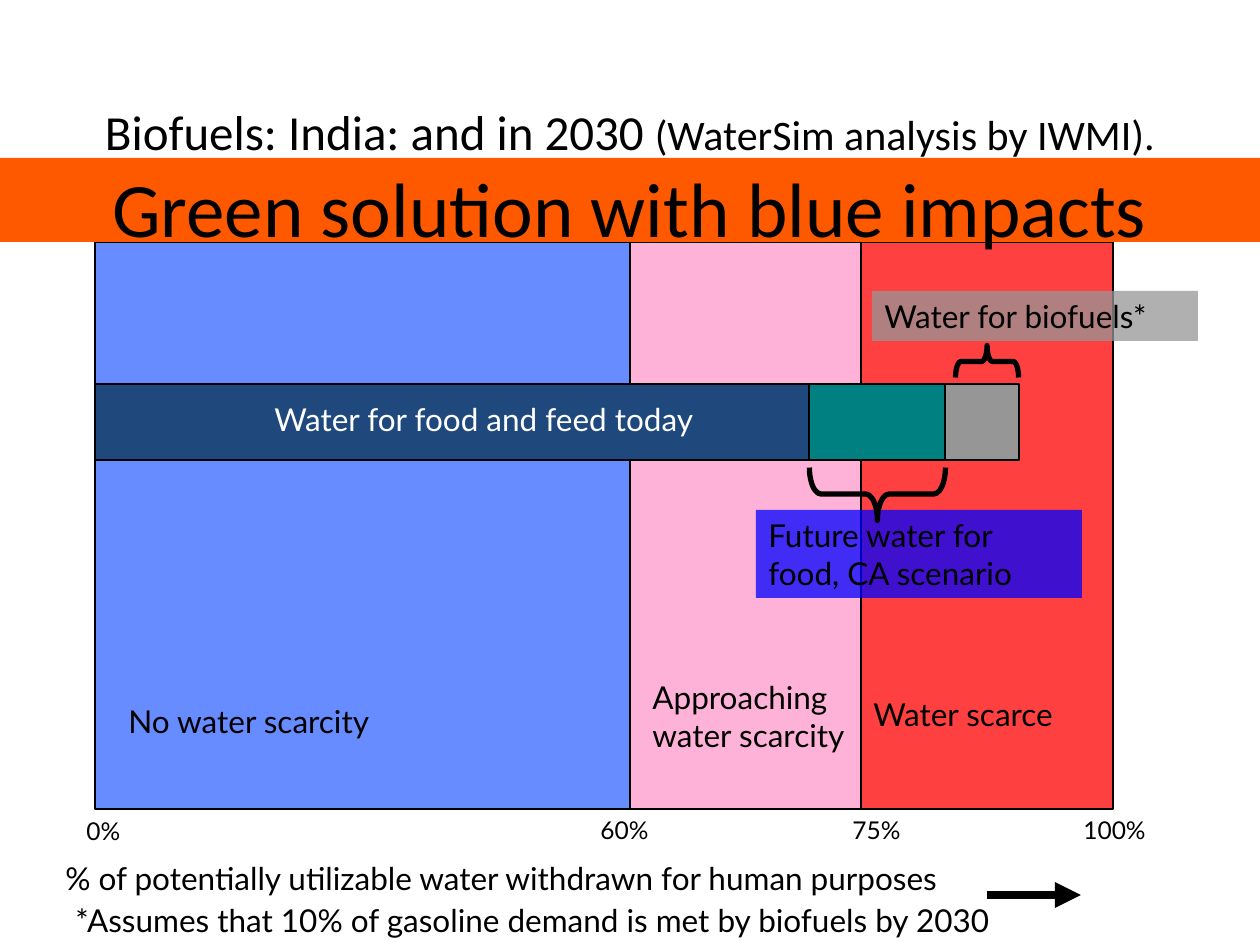
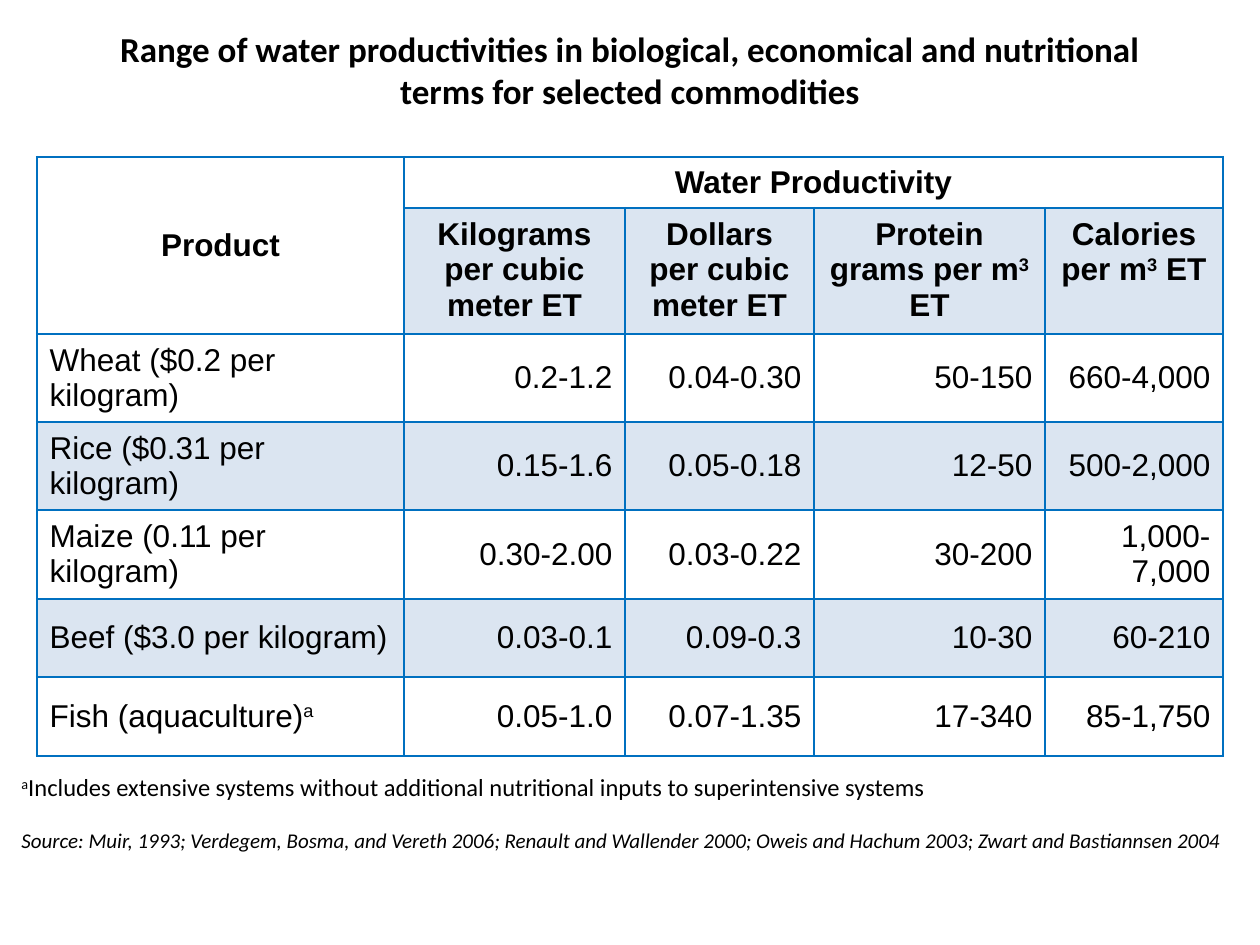
from dataclasses import dataclass
from itertools import product

import pptx
import pptx.dml.color
import pptx.enum.dml
import pptx.enum.shapes
import pptx.enum.text
import pptx.oxml
import pptx.oxml.ns
import pptx.util

EMU_PER_PX = 914400 / 126
ALIGN = pptx.enum.text.PP_ALIGN
ANCHOR = pptx.enum.text.MSO_ANCHOR
SHAPE = pptx.enum.shapes.MSO_SHAPE
COLORS = {
    "ink": "000000",
    "white": "FFFFFF",
    "strip": "FF5900",
    "plenty": "3366FF",
    "approaching": "FF99CC",
    "scarce": "FF0000",
    "food_today": "1F497D",
    "food_future": "008080",
    "food_callout": "0000FF",
    "biofuels": "969696",
    "grid": "0070C0",
    "shade": "4F81BD",
}


@dataclass(frozen=True)
class Box:
    left: int
    top: int
    width: int
    height: int

    def emu(self) -> list[int]:
        return [px(n) for n in (self.left, self.top, self.width, self.height)]


@dataclass(frozen=True)
class Segment:
    width: int
    color: str


@dataclass(frozen=True)
class Label:
    text: str
    box: Box
    size: int = 18
    color: str = "ink"


@dataclass(frozen=True)
class Callout:
    text: str
    box: Box
    color: str


@dataclass(frozen=True)
class Brace:
    box: Box
    rotation: int
    curl: float


ZONES = [Segment(535, "plenty"), Segment(231, "approaching"), Segment(252, "scarce")]
USES = [Segment(714, "food_today"), Segment(136, "food_future"), Segment(74, "biofuels")]
LABELS = [
    Label("% of potentially utilizable water withdrawn for human purposes", Box(53, 853, 998, 50)),
    Label("*Assumes that 10% of gasoline demand is met by biofuels by 2030", Box(63, 895, 1092, 50)),
    Label("No water scarcity", Box(116, 696, 315, 50)),
    Label("Approaching water scarcity", Box(640, 672, 221, 126)),
    Label("Water scarce", Box(861, 689, 315, 50)),
    Label("0%", Box(74, 810, 95, 42), 14),
    Label("60%", Box(588, 809, 126, 42), 14),
    Label("75%", Box(840, 809, 126, 42), 14),
    Label("100%", Box(1071, 809, 126, 42), 14),
    Label("Water for food and feed today", Box(262, 394, 504, 50), color="white"),
]
CALLOUTS = [
    Callout("Future water for food, CA scenario", Box(756, 510, 326, 88), "food_callout"),
    Callout("Water for biofuels*", Box(872, 291, 326, 50), "biofuels"),
]
BRACES = [
    Brace(Box(851, 426, 53, 136), 270, 0.22),
    Brace(Box(971, 330, 32, 63), 90, 0.17),
]
COLUMN_WIDTHS = [367, 221, 189, 231, 178]
ROW_HEIGHTS = [51, 126, 88, 88, 89, 78, 79]
# Text between carets is raised.
PRODUCTIVITY = [
    ["Product", "Water Productivity", "", "", ""],
    ["", "Kilograms per cubic meter ET", "Dollars per cubic meter ET",
     "Protein grams per m^3^ ET", "Calories per m^3^ ET"],
    ["Wheat ($0.2 per kilogram)", "0.2-1.2", "0.04-0.30", "50-150", "660-4,000"],
    ["Rice ($0.31 per kilogram)", "0.15-1.6", "0.05-0.18", "12-50", "500-2,000"],
    ["Maize (0.11 per kilogram)", "0.30-2.00", "0.03-0.22", "30-200", "1,000-7,000"],
    ["Beef ($3.0 per kilogram)", "0.03-0.1", "0.09-0.3", "10-30", "60-210"],
    ["Fish (aquaculture)^a^", "0.05-1.0", "0.07-1.35", "17-340", "85-1,750"],
]


def px(length: int) -> int:
    return round(length * EMU_PER_PX)


def rgb(name: str) -> pptx.dml.color.RGBColor:
    return pptx.dml.color.RGBColor.from_string(COLORS[name])


def write(paragraph, text: str, *, size: int = 18, font: str = "Lato", color: str = "ink",
          bold: bool = False, italic: bool = False, align=ALIGN.LEFT) -> None:
    """Append text to a paragraph, raising the parts between carets."""
    paragraph.alignment = align
    for index, part in enumerate(text.split("^")):
        if not part:
            continue
        run = paragraph.add_run()
        run.text = part
        run.font.size = pptx.util.Pt(size)
        run.font.name = font
        run.font.color.rgb = rgb(color)
        run.font.bold = bold
        run.font.italic = italic
        if index % 2:
            run.font._element.set("baseline", "30000")


def fill_solid(fill, properties, color: str, opacity: int = 100) -> None:
    fill.solid()
    fill.fore_color.rgb = rgb(color)
    if opacity < 100:
        tone = properties.find(pptx.oxml.ns.qn("a:solidFill"))[0]
        alpha = tone.makeelement(pptx.oxml.ns.qn("a:alpha"), {"val": str(opacity * 1000)})
        tone.append(alpha)


def add_shape(slide, box: Box, kind=SHAPE.RECTANGLE, *, color: str = "", opacity: int = 100,
              outline: float = 0):
    shape = slide.shapes.add_shape(kind, *box.emu())
    shape.shadow.inherit = False
    if color:
        fill_solid(shape.fill, shape.element.spPr, color, opacity)
    else:
        shape.fill.background()
    if outline:
        shape.line.color.rgb = rgb("ink")
        shape.line.width = pptx.util.Pt(outline)
    else:
        shape.line.fill.background()
    return shape


def add_segments(slide, segments: list[Segment], top: int, height: int, opacity: int = 100) -> None:
    """Lay segments side by side from the zero line."""
    left = 95
    for segment in segments:
        add_shape(slide, Box(left, top, segment.width, height), color=segment.color,
                  opacity=opacity, outline=0.75)
        left += segment.width


def add_text_frame(slide, box: Box):
    frame = slide.shapes.add_textbox(*box.emu()).text_frame
    frame.word_wrap = True
    return frame


def place_title(slide, box: Box):
    """Move the title placeholder to the front and return its text frame."""
    title = slide.shapes.title
    title.left, title.top, title.width, title.height = box.emu()
    slide.shapes.element.append(title.element)
    frame = title.text_frame
    frame.word_wrap = True
    frame.auto_size = pptx.enum.text.MSO_AUTO_SIZE.NONE
    frame.vertical_anchor = ANCHOR.TOP
    return frame


def add_arrow(slide) -> None:
    ends = [px(n) for n in (987, 895, 1081, 895)]
    arrow = slide.shapes.add_connector(pptx.enum.shapes.MSO_CONNECTOR.STRAIGHT, *ends)
    arrow.line.color.rgb = rgb("ink")
    arrow.line.width = pptx.util.Pt(5)
    qn = pptx.oxml.ns.qn
    properties = arrow.element.spPr
    line = properties.find(qn("a:ln"))
    line.append(line.makeelement(qn("a:tailEnd"), {"type": "triangle"}))
    properties.append(properties.makeelement(qn("a:effectLst"), {}))


def build_biofuels(slide) -> None:
    add_segments(slide, ZONES, 242, 567, opacity=75)
    add_segments(slide, USES, 384, 76)
    for callout in CALLOUTS:
        frame = add_shape(slide, callout.box, color=callout.color, opacity=75).text_frame
        frame.word_wrap = True
        frame.vertical_anchor = ANCHOR.TOP
        write(frame.paragraphs[0], callout.text)
    for brace in BRACES:
        shape = add_shape(slide, brace.box, SHAPE.LEFT_BRACE, outline=3)
        shape.rotation = brace.rotation
        shape.adjustments[0] = brace.curl
    for label in LABELS:
        frame = add_text_frame(slide, label.box)
        write(frame.paragraphs[0], label.text, size=label.size, color=label.color)
    add_arrow(slide)
    add_shape(slide, Box(0, 158, 1260, 84), color="strip")

    heading = place_title(slide, Box(0, 95, 1260, 126))
    style = {"font": "Calibri", "align": ALIGN.CENTER}
    topic = heading.paragraphs[0]
    write(topic, "Biofuels: India: and in 2030 ", size=28, **style)
    write(topic, "(WaterSim analysis by IWMI).", size=24, **style)
    write(heading.add_paragraph(), "Green solution with blue impacts", size=44, **style)


def add_borders(properties) -> None:
    for side in "LRTB":
        properties.append(pptx.oxml.parse_xml(
            f'<a:ln{side} {pptx.oxml.ns.nsdecls("a")} w="19050"><a:solidFill>'
            f'<a:srgbClr val="{COLORS["grid"]}"/></a:solidFill></a:ln{side}>'))


def add_productivity_table(slide) -> None:
    box = Box(37, 157, sum(COLUMN_WIDTHS), sum(ROW_HEIGHTS))
    table = slide.shapes.add_table(len(ROW_HEIGHTS), len(COLUMN_WIDTHS), *box.emu()).table
    table.first_row = table.horz_banding = False
    for column, width in zip(table.columns, COLUMN_WIDTHS):
        column.width = px(width)
    for row, height in zip(table.rows, ROW_HEIGHTS):
        row.height = px(height)
    for r, c in product(range(len(ROW_HEIGHTS)), range(len(COLUMN_WIDTHS))):
        cell = table.cell(r, c)
        is_header = r < 2
        cell.vertical_anchor = ANCHOR.MIDDLE
        if r == 1 and c:
            cell.vertical_anchor = ANCHOR.TOP
            cell.margin_top = px(9)
        properties = cell._tc.get_or_add_tcPr()
        add_borders(properties)
        if r % 2 and (r, c) != (1, 0):
            fill_solid(cell.fill, properties, "shade", 20)
        else:
            cell.fill.background()
        align = ALIGN.CENTER if is_header else ALIGN.RIGHT if c else ALIGN.LEFT
        write(cell.text_frame.paragraphs[0], PRODUCTIVITY[r][c], font="Arial",
              bold=is_header, align=align)
    table.cell(0, 0).merge(table.cell(1, 0))
    table.cell(0, 1).merge(table.cell(0, 4))


def build_productivity(slide) -> None:
    heading = place_title(slide, Box(84, 21, 1092, 97))
    write(heading.paragraphs[0],
          "Range of water productivities in biological, economical and nutritional "
          "terms for selected commodities",
          size=20, font="Calibri", bold=True, align=ALIGN.CENTER)
    add_productivity_table(slide)
    notes = add_text_frame(slide, Box(9, 766, 1242, 93))
    write(notes.paragraphs[0],
          "^a^Includes extensive systems without additional nutritional inputs "
          "to superintensive systems", size=14, font="Calibri")
    source = notes.add_paragraph()
    source.space_before = pptx.util.Pt(15)
    write(source,
          "Source: Muir, 1993; Verdegem, Bosma, and Vereth 2006; Renault and Wallender 2000; "
          "Oweis and Hachum 2003; Zwart and Bastiannsen 2004",
          size=12, font="Calibri", italic=True)


def main() -> None:
    deck = pptx.Presentation()
    deck.slide_width, deck.slide_height = px(1260), px(945)
    title_only = deck.slide_layouts[5]
    for build in (build_biofuels, build_productivity):
        build(deck.slides.add_slide(title_only))
    deck.save("out.pptx")


if __name__ == "__main__":
    main()
